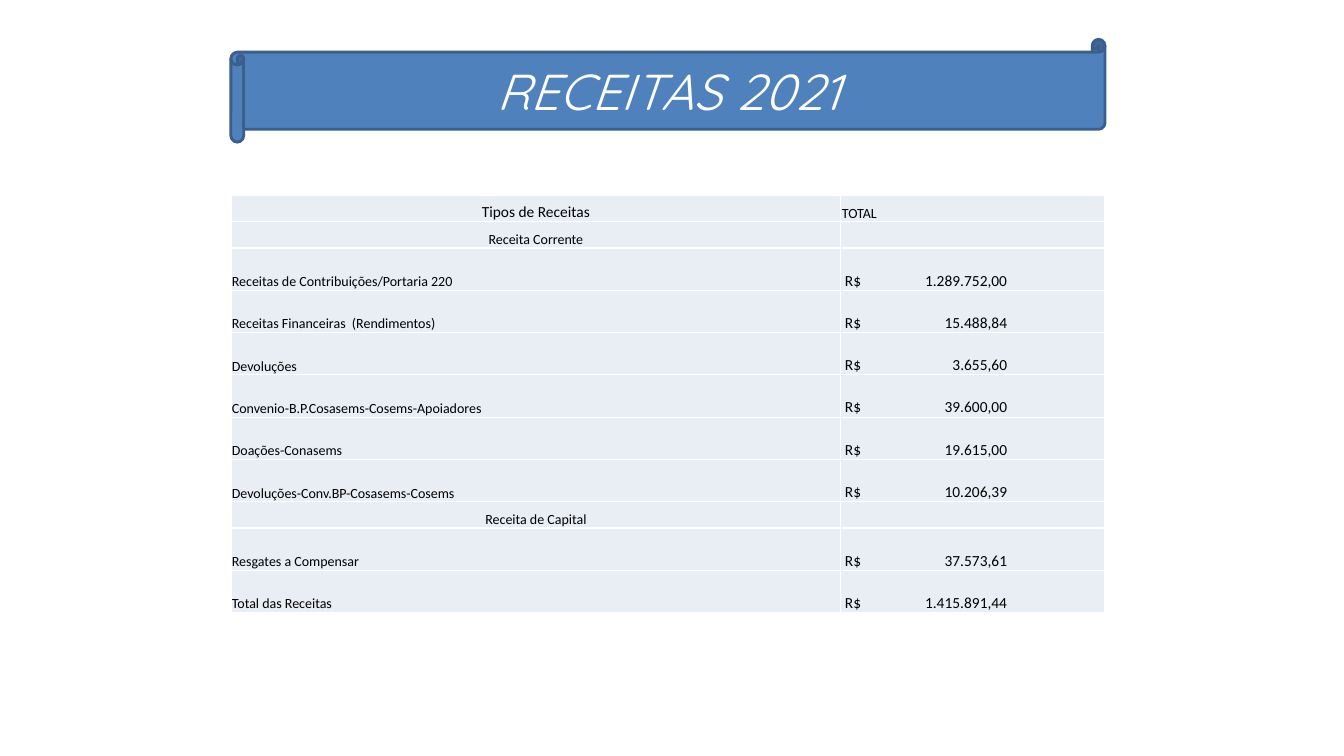
import pptx
import pptx.util
from lxml import etree
from pptx.dml.color import RGBColor
from pptx.enum.shapes import MSO_SHAPE
from pptx.enum.text import MSO_ANCHOR, PP_ALIGN
from pptx.oxml.ns import qn
from pptx.util import Inches

BLUE = RGBColor(0x4F, 0x81, 0xBD)
DARK_BLUE = RGBColor(0x3A, 0x5F, 0x8C)
PALE = RGBColor(0xE9, 0xED, 0xF4)
WHITE = RGBColor(0xFF, 0xFF, 0xFF)
BLACK = RGBColor(0, 0, 0)

LEFT, WIDTH = 2.29, 8.67
AMOUNT_TAB = 1.61
COLUMNS = (6.05, 2.62)
HEADING_HEIGHT, ITEM_HEIGHT = 0.26, 0.42

# Label and amount; a row without an amount is a section heading
RECEIPTS = [
    ("Receita Corrente", ""),
    ("Receitas de Contribuições/Portaria 220", "1.289.752,00"),
    ("Receitas Financeiras  (Rendimentos)", "15.488,84"),
    ("Devoluções", "3.655,60"),
    ("Convenio-B.P.Cosasems-Cosems-Apoiadores", "39.600,00"),
    ("Doações-Conasems", "19.615,00"),
    ("Devoluções-Conv.BP-Cosasems-Cosems", "10.206,39"),
    ("Receita de Capital", ""),
    ("Resgates a Compensar", "37.573,61"),
    ("Total das Receitas", "1.415.891,44"),
]


class Slide:
    def __init__(self, prs):
        self.s = prs.slides.add_slide(prs.slide_layouts[5])

    def font(self, p, size, color=BLACK, name="Calibri", italic=False):
        f = p.font
        f.name, f.size, f.italic = name, pptx.util.Pt(size), italic
        f.color.rgb = color

    def banner(self, top, height):
        sp = self.s.shapes.add_shape(MSO_SHAPE.HORIZONTAL_SCROLL, Inches(LEFT),
                                     Inches(top), Inches(WIDTH), Inches(height))
        sp.shadow.inherit = False
        sp.fill.solid()
        sp.fill.fore_color.rgb = BLUE
        sp.line.color.rgb = DARK_BLUE
        sp.line.width = pptx.util.Pt(2)

    def title(self, text, top, height):
        sp = self.s.shapes.title
        sp.left, sp.top = Inches(LEFT), Inches(top)
        sp.width, sp.height = Inches(WIDTH), Inches(height)
        # Bring the title in front of the banner
        self.s.shapes.element.append(sp.element)
        tf = sp.text_frame
        tf.text = text
        tf.vertical_anchor = MSO_ANCHOR.MIDDLE
        p = tf.paragraphs[0]
        p.alignment = PP_ALIGN.CENTER
        self.font(p, 36, WHITE, "Quicksand", True)

    def table(self, top, heights):
        frame = self.s.shapes.add_table(len(heights), len(COLUMNS), Inches(LEFT),
                                        Inches(top), Inches(WIDTH), Inches(sum(heights)))
        table = frame.table
        table.first_row = table.horz_banding = False
        for column, width in zip(table.columns, COLUMNS):
            column.width = Inches(width)
        for row, height in zip(table.rows, heights):
            row.height = Inches(height)
        return table

    def cell(self, cell, text, size=10, align=PP_ALIGN.LEFT, tab=None):
        cell.fill.solid()
        cell.fill.fore_color.rgb = PALE
        cell.vertical_anchor = MSO_ANCHOR.BOTTOM
        cell.margin_left = Inches(0.04 if tab else 0.01)
        cell.margin_right = cell.margin_top = Inches(0.01)
        cell.margin_bottom = 0
        cell.text = text
        p = cell.text_frame.paragraphs[0]
        p.alignment = align
        if tab:
            tabs = etree.SubElement(p._p.get_or_add_pPr(), qn("a:tabLst"))
            etree.SubElement(tabs, qn("a:tab"), pos=str(Inches(tab)), algn="r")
        self.font(p, size)
        if not text:
            # Keeps an empty cell from stretching its row
            etree.SubElement(p._p, qn("a:endParaRPr"), sz=str(size * 100))


def main():
    prs = pptx.Presentation()
    prs.slide_width, prs.slide_height = Inches(13.33), Inches(7.5)
    slide = Slide(prs)

    # Title on its scroll
    slide.banner(0.39, 1.02)
    slide.title("RECEITAS 2021", 0.39, 1.02)

    # Receipts table
    heights = [HEADING_HEIGHT] + [ITEM_HEIGHT if amount else HEADING_HEIGHT
                                  for _, amount in RECEIPTS]
    table = slide.table(1.94, heights)
    slide.cell(table.cell(0, 0), "Tipos de Receitas", 11, PP_ALIGN.CENTER)
    slide.cell(table.cell(0, 1), "TOTAL")
    for i, (label, amount) in enumerate(RECEIPTS, 1):
        if amount:
            slide.cell(table.cell(i, 0), label)
            slide.cell(table.cell(i, 1), "R$\t" + amount, 11, tab=AMOUNT_TAB)
        else:
            slide.cell(table.cell(i, 0), label, align=PP_ALIGN.CENTER)
            slide.cell(table.cell(i, 1), "")

    prs.save("out.pptx")


if __name__ == "__main__":
    main()
